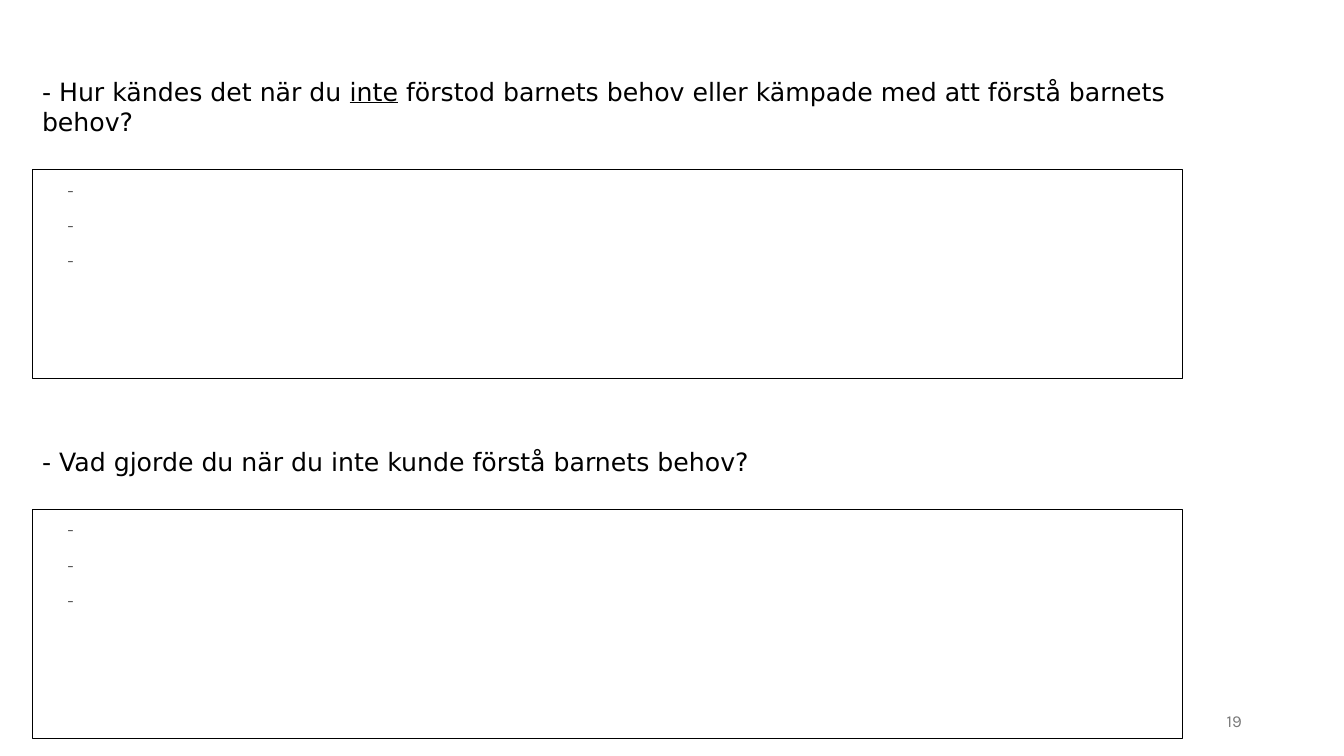
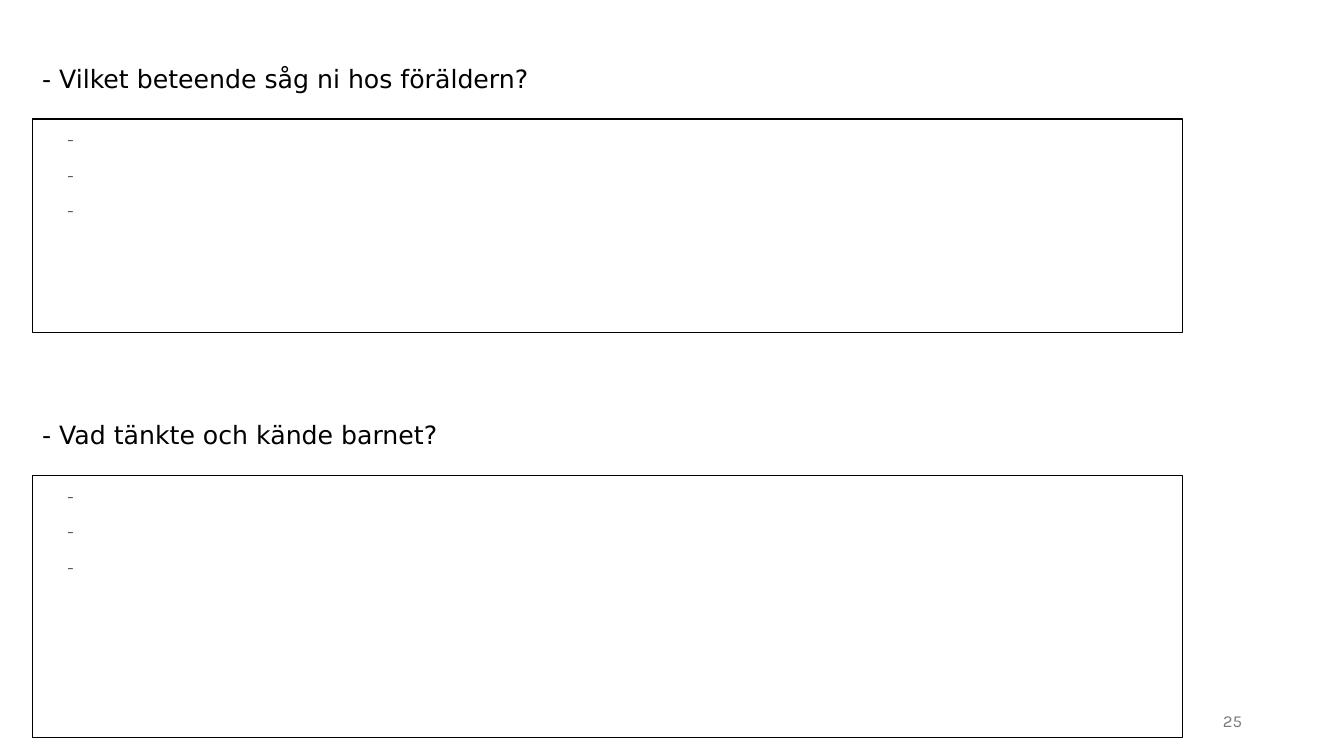
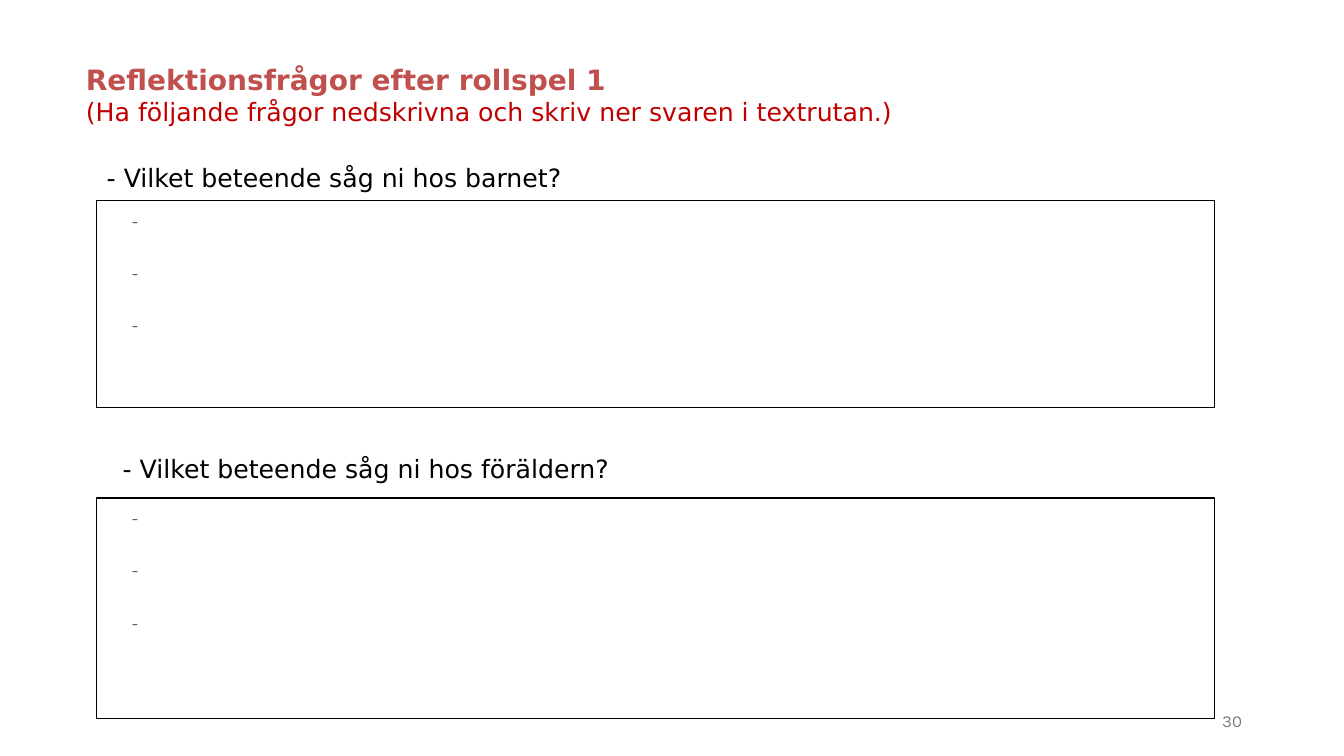
import dataclasses

import pptx
import pptx.dml.color
import pptx.enum.shapes
import pptx.enum.text
import pptx.presentation
import pptx.shapes.autoshape
import pptx.slide
import pptx.text.text
import pptx.util

Cm = pptx.util.Cm
Pt = pptx.util.Pt
Auto = pptx.enum.text.MSO_AUTO_SIZE
Anchor = pptx.enum.text.MSO_ANCHOR
Align = pptx.enum.text.PP_ALIGN

SANS, SERIF, KARLA = "DejaVu Sans", "Cambria", "Karla"
BLACK, WHITE, GREY, PALE = "000000", "FFFFFF", "595959", "797979"
ROSE, RED = "C0504D", "C00000"
TITLE_ONLY, BLANK = 5, 6
LINE = 1.02  # height of a one-line text box, in cm


@dataclasses.dataclass
class Prompt:
    """A question and its answer box; text between underscores is underlined."""
    text: str
    left: float
    top: float
    width: float
    box_top: float
    box_height: float
    height: float = LINE


@dataclasses.dataclass
class Page:
    number: int
    box_left: float
    box_width: float
    prompts: list[Prompt]
    before: float = 0
    title: tuple[str, ...] = ()


PAGES = [
    Page(19, 0.81, 28.98, [
        Prompt("- Hur kändes det när du _inte_ förstod barnets behov eller "
               "kämpade med att förstå barnets behov?",
               0.81, 1.8, 28.98, 4.27, 5.26, 1.8),
        Prompt("- Vad gjorde du när du inte kunde förstå barnets behov?",
               0.81, 11.13, 24.1, 12.83, 5.77),
    ]),
    Page(25, 0.81, 28.98, [
        Prompt("- Vilket beteende såg ni hos föräldern?",
               0.81, 1.47, 30, 3, 5.38),
        Prompt("- Vad tänkte och kände barnet?",
               0.81, 10.44, 16.94, 11.99, 6.6),
    ]),
    Page(30, 2.44, 28.17, [
        Prompt("- Vilket beteende såg ni hos barnet?",
               2.44, 3.96, 16.94, 5.05, 5.23),
        Prompt("- Vilket beteende såg ni hos föräldern?",
               2.84, 11.3, 30, 12.55, 5.56),
    ], before=12, title=(
        "Reflektionsfrågor efter rollspel 1",
        "(Ha följande frågor nedskrivna och skriv ner svaren i textrutan.)",
    )),
]


def color(value: str) -> pptx.dml.color.RGBColor:
    return pptx.dml.color.RGBColor.from_string(value)


def style(para: pptx.text.text._Paragraph, size: float, face: str,
          shade: str, bold: bool = False) -> None:
    for run in para.runs:
        run.font.size = Pt(size)
        run.font.name = face
        run.font.bold = bold
        run.font.color.rgb = color(shade)


def add_text(slide: pptx.slide.Slide, left: float, top: float, width: float,
             height: float) -> pptx.text.text.TextFrame:
    shape = slide.shapes.add_textbox(Cm(left), Cm(top), Cm(width), Cm(height))
    shape.text_frame.word_wrap = True
    return shape.text_frame


def add_title(slide: pptx.slide.Slide, lines: tuple[str, ...]) -> None:
    title = slide.shapes.title
    title.left, title.top = Cm(1.91), Cm(1.45)
    title.width, title.height = Cm(22.73), Cm(1.88)
    frame = title.text_frame
    frame.text = "\n".join(lines)
    frame.word_wrap = True
    frame.auto_size = Auto.SHAPE_TO_FIT_TEXT
    frame.vertical_anchor = Anchor.TOP
    head, note = frame.paragraphs
    head.alignment = note.alignment = Align.LEFT
    style(head, 20, SANS, ROSE, bold=True)
    style(note, 18, SANS, RED)


def add_query(slide: pptx.slide.Slide, prompt: Prompt) -> None:
    frame = add_text(slide, prompt.left, prompt.top, prompt.width, prompt.height)
    frame.auto_size = Auto.SHAPE_TO_FIT_TEXT
    para = frame.paragraphs[0]
    for index, part in enumerate(prompt.text.split("_")):
        run = para.add_run()
        run.text = part
        run.font.underline = index % 2 == 1
    style(para, 18, SANS, BLACK)


def add_box(slide: pptx.slide.Slide, page: Page, prompt: Prompt) -> None:
    """Draw the answer box with three dashes to write after."""
    box = slide.shapes.add_shape(
        pptx.enum.shapes.MSO_SHAPE.RECTANGLE, Cm(page.box_left),
        Cm(prompt.box_top), Cm(page.box_width), Cm(prompt.box_height))
    box.shadow.inherit = False
    box.fill.solid()
    box.fill.fore_color.rgb = color(WHITE)
    box.line.color.rgb = color(BLACK)
    box.line.width = Pt(0.75)
    frame = box.text_frame
    frame.text = "\n".join("-" * 3)
    frame.word_wrap = True
    frame.vertical_anchor = Anchor.TOP
    for para in frame.paragraphs:
        para.alignment = Align.LEFT
        para.line_spacing = 1.07
        para.space_before = Pt(page.before)
        para.space_after = Pt(6)
        props = para._p.get_or_add_pPr()
        props.set("marL", str(Cm(1.27)))
        props.set("indent", str(Cm(-0.64)))
        style(para, 15, SERIF, GREY)


def add_number(slide: pptx.slide.Slide, number: int) -> None:
    frame = add_text(slide, 23.93, 17.65, 7.62, LINE)
    frame.text = str(number)
    frame.vertical_anchor = Anchor.MIDDLE
    para = frame.paragraphs[0]
    para.alignment = Align.RIGHT
    style(para, 12, KARLA, PALE)


def add_page(deck: pptx.presentation.Presentation, page: Page) -> None:
    layout = deck.slide_layouts[TITLE_ONLY if page.title else BLANK]
    slide = deck.slides.add_slide(layout)
    if page.title:
        add_title(slide, page.title)
    for prompt in page.prompts:
        add_query(slide, prompt)
        add_box(slide, page, prompt)
    add_number(slide, page.number)


def main() -> None:
    deck = pptx.Presentation()
    deck.slide_width, deck.slide_height = Cm(33.87), Cm(19.05)
    for page in PAGES:
        add_page(deck, page)
    deck.save("out.pptx")


if __name__ == "__main__":
    main()
